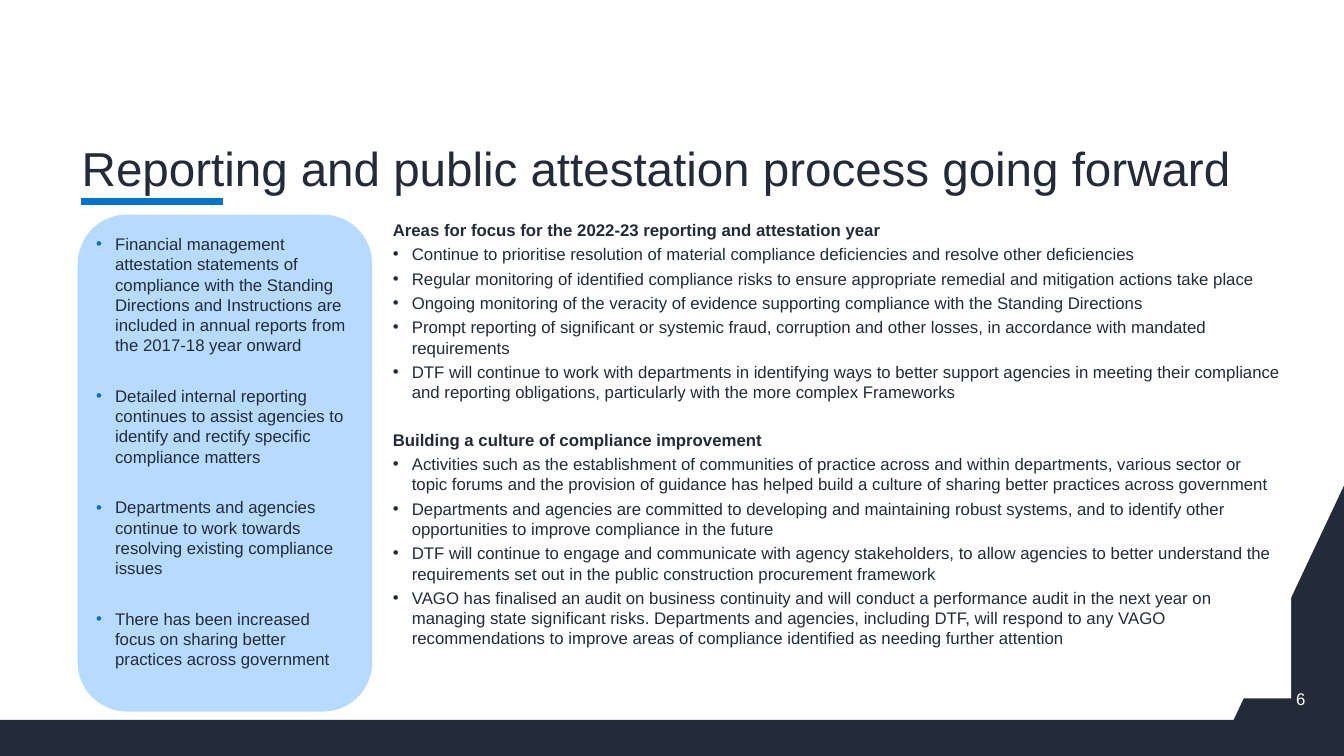
from lxml import etree
from pptx import Presentation
from pptx.dml.color import RGBColor
from pptx.enum.shapes import MSO_CONNECTOR as LINK, MSO_SHAPE as SHAPE
from pptx.enum.text import MSO_ANCHOR as ANCHOR, PP_ALIGN as ALIGN
from pptx.oxml.ns import qn
from pptx.util import Cm, Pt

NAVY = RGBColor(0x23, 0x2B, 0x39)
BLUE = RGBColor(0x00, 0x72, 0xCE)
PALE = RGBColor(0xB7, 0xDB, 0xFF)
WHITE = RGBColor(0xFF, 0xFF, 0xFF)
WIDE, HIGH = Cm(33.87), Cm(19.05)
FONT = "Arial"

TITLE = "Reporting and public attestation process going forward"
NOTES = [
    "Financial management attestation statements of compliance with the Standing Directions "
    "and Instructions are included in annual reports from the 2017-18 year onward",
    "Detailed internal reporting continues to assist agencies to identify and rectify specific "
    "compliance matters",
    "Departments and agencies continue to work towards resolving existing compliance issues",
    "There has been increased focus on sharing better practices across government",
]
TOPICS = {
    "Areas for focus for the 2022-23 reporting and attestation year": [
        "Continue to prioritise resolution of material compliance deficiencies and resolve other "
        "deficiencies",
        "Regular monitoring of identified compliance risks to ensure appropriate remedial and "
        "mitigation actions take place",
        "Ongoing monitoring of the veracity of evidence supporting compliance with the Standing "
        "Directions",
        "Prompt reporting of significant or systemic fraud, corruption and other losses, in "
        "accordance with mandated requirements",
        "DTF will continue to work with departments in identifying ways to better support "
        "agencies in meeting their compliance and reporting obligations, particularly with the "
        "more complex Frameworks",
    ],
    "Building a culture of compliance improvement": [
        "Activities such as the establishment of communities of practice across and within "
        "departments, various sector or topic forums and the provision of guidance has helped "
        "build a culture of sharing better practices across government",
        "Departments and agencies are committed to developing and maintaining robust systems, "
        "and to identify other opportunities to improve compliance in the future",
        "DTF will continue to engage and communicate with agency stakeholders, to allow agencies "
        "to better understand the requirements set out in the public construction procurement "
        "framework",
        "VAGO has finalised an audit on business continuity and will conduct a performance audit "
        "in the next year on managing state significant risks. Departments and agencies, "
        "including DTF, will respond to any VAGO recommendations to improve areas of compliance "
        "identified as needing further attention",
    ],
}


def paint(shape, color):
    shape.fill.solid()
    shape.fill.fore_color.rgb = color
    shape.line.fill.background()
    shape.shadow.inherit = False


def pad(frame, side=Cm(0.1)):
    frame.margin_left = frame.margin_right = side


def write(para, text, size=12, color=NAVY, bold=False, align=ALIGN.LEFT):
    para.text = text
    para.alignment = align
    for run in para.runs:
        font = run.font
        font.name, font.size, font.bold = FONT, Pt(size), bold
        font.color.rgb = color


def bullet(para, color):
    props = para._p.get_or_add_pPr()
    props.set("marL", str(Cm(0.48)))
    props.set("indent", str(-Cm(0.48)))
    tint = etree.SubElement(props, qn("a:buClr"))
    etree.SubElement(tint, qn("a:srgbClr"), val=str(color))
    etree.SubElement(props, qn("a:buFont"), typeface=FONT)
    etree.SubElement(props, qn("a:buChar"), char="•")


def next_para(frame, first):
    return frame.paragraphs[0] if first else frame.add_paragraph()


def add_base(slide, left, top, width, height):
    """Footer band rising to a slope at its right end."""
    right, floor, band = left + width, top + height, top + Cm(5.9)
    pen = slide.shapes.build_freeform(left, band)
    pen.add_line_segments([(left, floor), (right, floor), (right, top),
                           (left + Cm(31.09), band)])
    paint(pen.convert_to_shape(), NAVY)


def add_title(slide, left, top, width, height):
    # Accent rule under the title
    x, y = left + Cm(0.07), top + height
    rule = slide.shapes.add_connector(LINK.STRAIGHT, x, y, x + Cm(3.58), y)
    rule.line.color.rgb = BLUE
    rule.line.width = Pt(4.5)
    etree.SubElement(rule._element.spPr, qn("a:effectLst"))
    # Title text
    frame = slide.shapes.add_textbox(left, top, width, height).text_frame
    frame.word_wrap = True
    frame.vertical_anchor = ANCHOR.BOTTOM
    pad(frame)
    para = frame.paragraphs[0]
    write(para, TITLE, 34)
    para.line_spacing = 0.9


def add_panel(slide, left, top, width, height):
    """Rounded panel with the background notes."""
    panel = slide.shapes.add_shape(SHAPE.ROUNDED_RECTANGLE, left, top, width, height)
    paint(panel, PALE)
    frame = panel.text_frame
    frame.word_wrap = True
    frame.vertical_anchor = ANCHOR.TOP
    pad(frame)
    for i, note in enumerate(NOTES):
        para = next_para(frame, i == 0)
        write(para, note)
        para.space_before, para.space_after = Pt(10), Pt(12)
        bullet(para, BLUE)


def add_topics(slide, left, top, width, height):
    """White area with headed bullet lists."""
    area = slide.shapes.add_shape(SHAPE.RECTANGLE, left, top, width, height)
    paint(area, WHITE)
    frame = area.text_frame
    frame.word_wrap = True
    frame.vertical_anchor = ANCHOR.TOP
    for i, (head, points) in enumerate(TOPICS.items()):
        para = next_para(frame, i == 0)
        write(para, head, bold=True)
        para.space_before, para.space_after = Pt(16.8 if i else 0), Pt(3)
        for point in points:
            para = frame.add_paragraph()
            write(para, point)
            para.space_before, para.space_after = Pt(0), Pt(3)
            bullet(para, NAVY)


def add_number(slide, left, top, width, height):
    frame = slide.shapes.add_textbox(left, top, width, height).text_frame
    frame.word_wrap = True
    frame.vertical_anchor = ANCHOR.MIDDLE
    write(frame.paragraphs[0], "6", color=WHITE, align=ALIGN.RIGHT)


def main():
    deck = Presentation()
    deck.slide_width, deck.slide_height = WIDE, HIGH
    slide = deck.slides.add_slide(deck.slide_layouts[6])
    add_base(slide, 0, Cm(12.24), WIDE, HIGH - Cm(12.24))
    add_title(slide, Cm(1.96), Cm(1.8), Cm(29.21), Cm(3.28))
    add_panel(slide, Cm(1.96), Cm(5.41), Cm(7.42), Cm(12.52))
    add_topics(slide, Cm(9.65), Cm(5.41), Cm(22.89), Cm(12.19))
    add_number(slide, Cm(31.93), Cm(17.09), Cm(1.22), Cm(1.02))
    deck.save("out.pptx")


if __name__ == "__main__":
    main()
